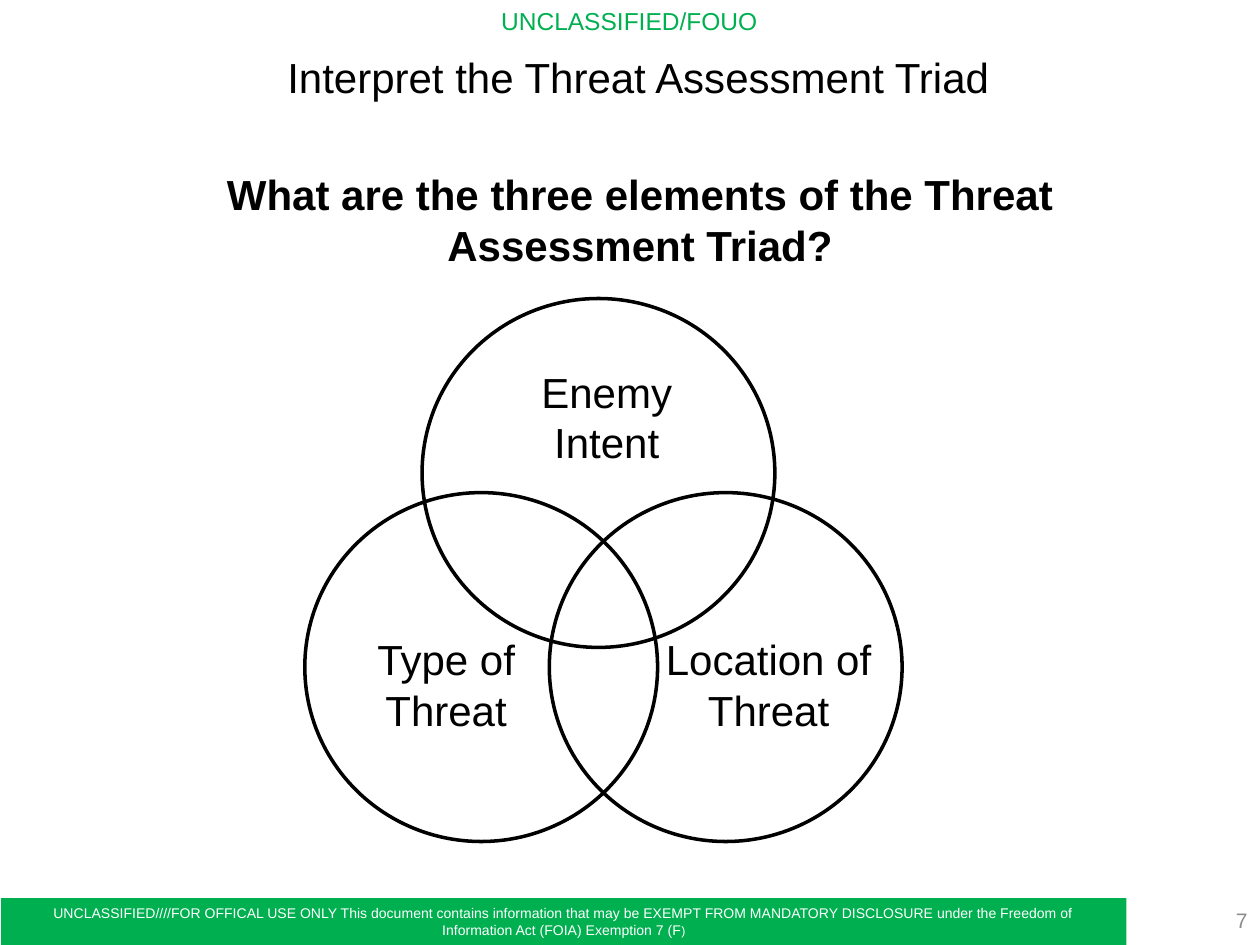
from pptx import Presentation
from pptx.dml.color import RGBColor
from pptx.enum.shapes import MSO_SHAPE
from pptx.enum.text import MSO_ANCHOR, PP_ALIGN
from pptx.util import Pt

BLACK = RGBColor(0x00, 0x00, 0x00)
WHITE = RGBColor(0xFF, 0xFF, 0xFF)
GREEN = RGBColor(0x00, 0xB0, 0x50)
GRAY = RGBColor(0x8C, 0x8C, 0x8C)

CIRCLE_WIDTH, CIRCLE_HEIGHT = 201.6, 199.4
LABEL_HEIGHT = 65.5


def format_run(run, size, color=BLACK, bold=False):
    values = {"name": "Arial", "size": Pt(size), "bold": bold}
    for name, value in values.items():
        setattr(run.font, name, value)
    run.font.color.rgb = color


def write_text(shape, text, size, color=BLACK, bold=False,
               align=PP_ALIGN.CENTER, anchor=MSO_ANCHOR.TOP):
    frame = shape.text_frame
    frame.word_wrap = True
    frame.vertical_anchor = anchor
    paragraph = frame.paragraphs[0]
    paragraph.alignment = align
    run = paragraph.add_run()
    run.text = text
    format_run(run, size, color, bold)
    return paragraph


def place(shape, left, top, width, height):
    box = {"left": left, "top": top, "width": width, "height": height}
    for name, value in box.items():
        setattr(shape, name, Pt(value))


def add_label(slide, box, text, size, **style):
    shape = slide.shapes.add_textbox(*map(Pt, box))
    write_text(shape, text, size, **style)


def add_circle(slide, left, top):
    circle = slide.shapes.add_shape(
        MSO_SHAPE.OVAL, Pt(left), Pt(top), Pt(CIRCLE_WIDTH), Pt(CIRCLE_HEIGHT))
    circle.shadow.inherit = False
    circle.fill.background()
    circle.line.color.rgb = BLACK
    circle.line.width = Pt(2)


def add_footer(slide):
    bar = slide.shapes.add_shape(
        MSO_SHAPE.RECTANGLE, Pt(0.7), Pt(513.2), Pt(643), Pt(26.8))
    bar.shadow.inherit = False
    bar.fill.solid()
    bar.fill.fore_color.rgb = GREEN
    bar.line.fill.background()
    margins = {"margin_left": 14, "margin_right": 14,
               "margin_top": 0, "margin_bottom": 0}
    for name, value in margins.items():
        setattr(bar.text_frame, name, Pt(value))
    paragraph = write_text(
        bar,
        "UNCLASSIFIED////FOR OFFICAL USE ONLY This document contains "
        "information that may be EXEMPT FROM MANDATORY DISCLOSURE under the "
        "Freedom of Information Act (FOIA) Exemption 7 (F",
        8, color=WHITE, anchor=MSO_ANCHOR.MIDDLE)
    closing = paragraph.add_run()
    closing.text = ")"
    format_run(closing, 7, WHITE)


def main():
    presentation = Presentation()
    presentation.slide_width, presentation.slide_height = Pt(720), Pt(540)
    slide = presentation.slides.add_slide(presentation.slide_layouts[5])

    # Classification marking and footer bar
    add_label(slide, (277.2, 0, 164.9, 24.5), "UNCLASSIFIED/FOUO", 14,
              color=GREEN)
    add_footer(slide)

    # Triad of overlapping circles
    for left, top in ((174.2, 281.5), (313.9, 281.5), (241.2, 170.6)):
        add_circle(slide, left, top)

    # Title and question
    title = slide.shapes.title
    place(title, 63, 18, 603.4, 51.8)
    write_text(title, "Interpret the Threat Assessment Triad", 24,
               anchor=MSO_ANCHOR.MIDDLE)
    add_label(slide, (51.8, 92.9, 627.8, LABEL_HEIGHT),
              "What are the three elements of the Threat Assessment Triad?",
              24, bold=True)

    # Circle labels
    labels = (("Enemy Intent", 293.8, 205.9, 105.8),
              ("Type of Threat", 180, 358.6, 149.8),
              ("Location of Threat", 370.1, 358.6, 138.2))
    for text, left, top, width in labels:
        add_label(slide, (left, top, width, LABEL_HEIGHT), text, 24)

    # Slide number
    add_label(slide, (655.2, 511.2, 64.8, 28.8), "7", 12, color=GRAY,
              align=PP_ALIGN.RIGHT, anchor=MSO_ANCHOR.MIDDLE)

    presentation.save("out.pptx")


if __name__ == "__main__":
    main()
